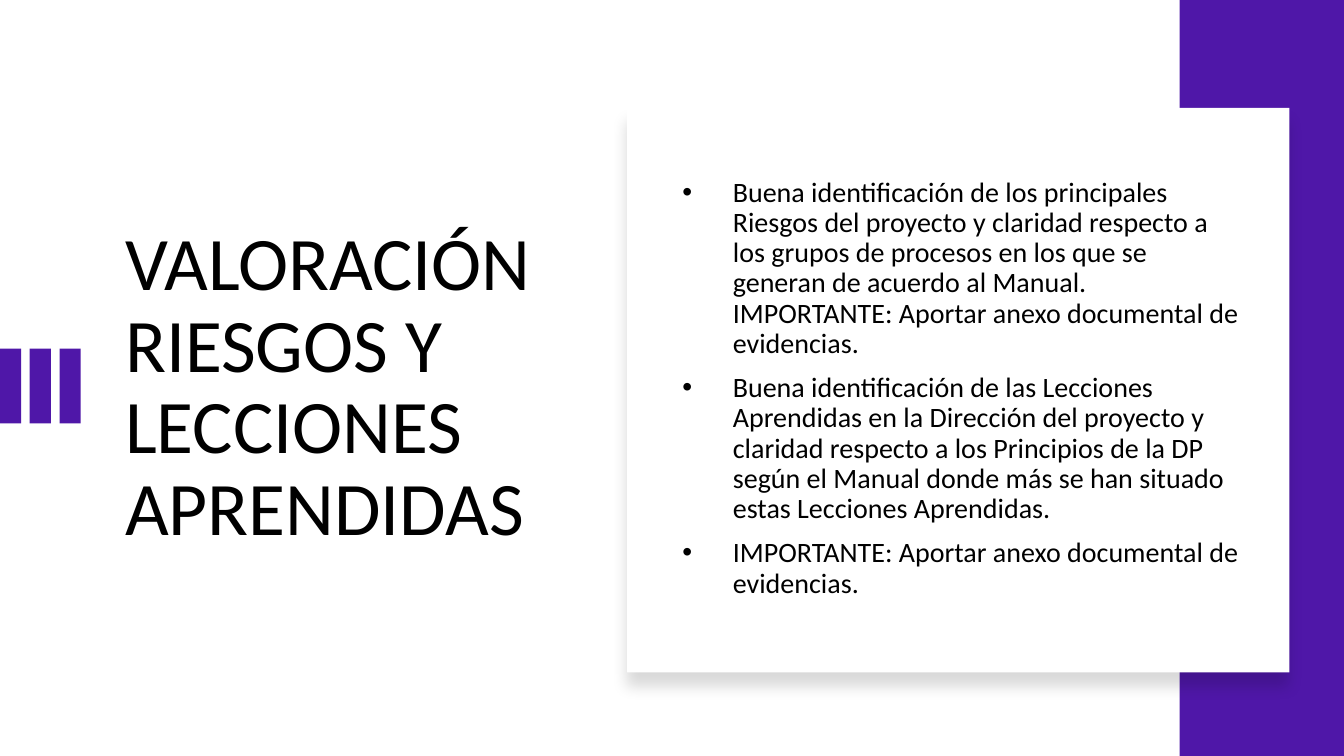
from lxml.etree import SubElement
from pptx import Presentation
from pptx.dml.color import RGBColor
from pptx.enum.shapes import MSO_SHAPE
from pptx.enum.text import MSO_ANCHOR, MSO_AUTO_SIZE, PP_ALIGN
from pptx.oxml import parse_xml
from pptx.oxml.ns import nsdecls, qn
from pptx.util import Inches, Pt

COLORS = {"purple": "4F17A8", "white": "FFFFFF", "text": "000000", "shadow": "000000"}
FONT = "Calibri"
TITLE = "VALORACIÓN RIESGOS Y LECCIONES APRENDIDAS"
POINTS = [
    "Buena identificación de los principales Riesgos del proyecto y claridad respecto a "
    "los grupos de procesos en los que se generan de acuerdo al Manual. "
    "IMPORTANTE: Aportar anexo documental de evidencias.",
    "Buena identificación de las Lecciones Aprendidas en la Dirección del proyecto y "
    "claridad respecto a los Principios de la DP según el Manual donde más se han situado "
    "estas Lecciones Aprendidas.",
    "IMPORTANTE: Aportar anexo documental de evidencias.",
]


def add_rect(slide, x, y, w, h, color):
    """Add a plain filled rectangle without outline or shadow."""
    sp = slide.shapes.add_shape(
        MSO_SHAPE.RECTANGLE, Inches(x), Inches(y), Inches(w), Inches(h))
    sp.shadow.inherit = False
    sp.fill.solid()
    sp.fill.fore_color.rgb = RGBColor.from_string(COLORS[color])
    sp.line.fill.background()
    return sp


def add_run(p, text, size):
    """Add one run in the slide's font and text colour."""
    r = p.add_run()
    r.text = text
    r.font.name = FONT
    r.font.size = Pt(size)
    r.font.color.rgb = RGBColor.from_string(COLORS["text"])


def add_drop_shadow(sp, blur, distance, opacity):
    """Give a shape a soft shadow that falls straight down."""
    effects = sp._element.spPr.find(qn("a:effectLst"))
    effects.append(parse_xml(
        f'<a:outerShdw {nsdecls("a")} blurRad="{Pt(blur)}" dist="{Pt(distance)}" '
        f'dir="5400000" algn="t" rotWithShape="0"><a:srgbClr val="{COLORS["shadow"]}">'
        f'<a:alpha val="{opacity * 1000}"/></a:srgbClr></a:outerShdw>'))


def set_title(slide, x, y, w, h):
    """Place the title placeholder and write the heading."""
    title = slide.shapes.title
    title.left, title.top, title.width, title.height = map(Inches, (x, y, w, h))
    tf = title.text_frame
    tf.word_wrap = True
    tf.auto_size = MSO_AUTO_SIZE.NONE
    tf.vertical_anchor = MSO_ANCHOR.MIDDLE
    p = tf.paragraphs[0]
    p.alignment = PP_ALIGN.LEFT
    p.line_spacing = 0.9
    add_run(p, TITLE, 54)


def add_accent_bars(slide, x, y, w, h, count=3, bar=0.21):
    """Spread equal vertical bars over the given box."""
    step = (w - bar) / (count - 1)
    for i in range(count):
        add_rect(slide, x + i * step, y, bar, h, "purple")


def add_bullet(p, indent):
    """Give a paragraph a hanging round bullet."""
    pPr = p._p.get_or_add_pPr()
    pPr.set("marL", str(Inches(indent)))
    pPr.set("indent", str(-Inches(indent)))
    SubElement(pPr, qn("a:buFont"), typeface="Arial")
    SubElement(pPr, qn("a:buChar"), char="•")


def add_card(slide, x, y, w, h):
    """Draw the white card and its bulleted assessment."""
    card = add_rect(slide, x, y, w, h, "white")
    add_drop_shadow(card, blur=11, distance=10, opacity=15)
    box = slide.shapes.add_textbox(
        Inches(x + 0.45), Inches(y + 0.39), Inches(w - 0.82), Inches(h - 0.81))
    tf = box.text_frame
    tf.word_wrap = True
    tf.vertical_anchor = MSO_ANCHOR.MIDDLE
    for i, text in enumerate(POINTS):
        p = tf.add_paragraph() if i else tf.paragraphs[0]
        add_bullet(p, 0.5)
        p.alignment = PP_ALIGN.LEFT
        p.line_spacing = 0.9
        p.space_before = Pt(10 if i else 0)
        add_run(p, text, 20)


def main():
    """Build and save the slide."""
    prs = Presentation()
    prs.slide_width, prs.slide_height = Inches(13.33), Inches(7.5)
    s = prs.slides.add_slide(prs.slide_layouts[5])
    s.background.fill.solid()
    s.background.fill.fore_color.rgb = RGBColor.from_string(COLORS["white"])
    set_title(s, 1.14, 1.46, 4.26, 4.79)
    add_accent_bars(s, 0, 3.46, 0.8, 0.74)
    add_rect(s, 11.7, 0, 1.63, 7.5, "purple")
    add_card(s, 6.22, 1.07, 6.57, 5.6)
    prs.save("out.pptx")


if __name__ == "__main__":
    main()
